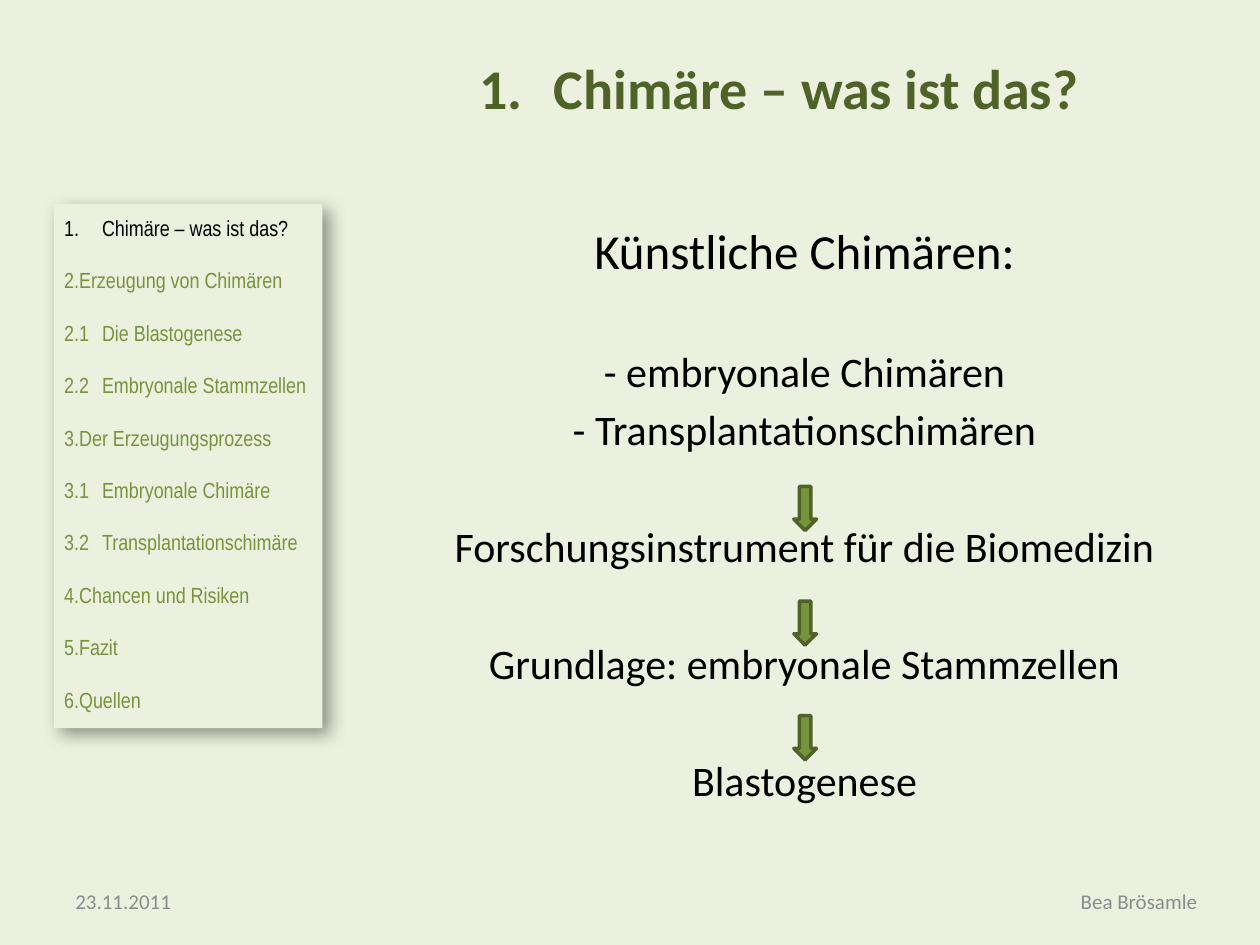
from lxml import etree
from pptx import Presentation
from pptx.dml.color import RGBColor
from pptx.enum import shapes, text
from pptx.oxml.ns import qn
from pptx.util import Inches, Pt

PALE, GREEN, DARK, BLACK, GREY = "EBF1DE", "77933C", "4F6228", "000000", "8C8C8C"
LEFT, CENTER, RIGHT = text.PP_ALIGN.LEFT, text.PP_ALIGN.CENTER, text.PP_ALIGN.RIGHT

TITLE = "1.\tChimäre – was ist das?"
# text, size, space before
BODY = [
    ("Künstliche Chimären:", 28, 5),
    ("- embryonale Chimären", 24, 38),
    ("- Transplantationschimären", 24, 4.4),
    ("Forschungsinstrument für die Biomedizin", 24, 38),
    ("Grundlage: embryonale Stammzellen", 24, 38),
    ("Blastogenese", 24, 38),
]
# automatic number (or None), text, hanging indent, colour
AGENDA = [
    (1, "Chimäre – was ist das?", 0.3, BLACK),
    (2, "Erzeugung von Chimären", 0, GREEN),
    (None, "2.1\tDie Blastogenese", 0.3, GREEN),
    (None, "2.2\tEmbryonale Stammzellen", 0.3, GREEN),
    (3, "Der Erzeugungsprozess", 0, GREEN),
    (None, "3.1\tEmbryonale Chimäre", 0.3, GREEN),
    (None, "3.2\tTransplantationschimäre", 0.3, GREEN),
    (4, "Chancen und Risiken", 0, GREEN),
    (5, "Fazit", 0, GREEN),
    (6, "Quellen", 0, GREEN),
]
# text, left, width, alignment
FOOTERS = [("23.11.2011", 0.5, 2.33, LEFT), ("Bea Brösamle", 6.58, 3.02, RIGHT)]
ARROW_TOP, ARROW_STEP, ARROW_COUNT = 3.86, 0.91, 3


def rgb(value):
    return RGBColor.from_string(value)


def place(sp, left, top, width, height):
    sp.left, sp.top, sp.width, sp.height = map(Inches, (left, top, width, height))


def set_frame(tf, inset, anchor):
    tf.word_wrap = True
    tf.auto_size = text.MSO_AUTO_SIZE.NONE
    tf.vertical_anchor = anchor
    tf.margin_left = tf.margin_right = Inches(inset)
    tf.margin_top = tf.margin_bottom = Inches(inset / 2 if inset == 0.1 else inset)


def write(p, words, size, color, align=LEFT, font="Calibri", bold=False,
          before=0, hang=0, number=None):
    """Fill one paragraph; number gives it an automatic number."""
    p.text = words
    p.alignment = align
    p.space_before = Pt(before)
    f = p.runs[0].font
    f.name, f.size, f.bold = font, Pt(size), bold
    f.color.rgb = rgb(color)
    pPr = p._p.get_or_add_pPr()
    pPr.set("marL", str(Inches(hang)))
    pPr.set("indent", str(-Inches(hang)))
    if number:
        etree.SubElement(pPr, qn("a:buAutoNum"), type="arabicPeriod",
                         startAt=str(number))
    else:
        etree.SubElement(pPr, qn("a:buNone"))


def paragraphs(tf, count):
    return [tf.paragraphs[0]] + [tf.add_paragraph() for _ in range(count - 1)]


def add_shadow(sp):
    effects = etree.SubElement(sp._element.spPr, qn("a:effectLst"))
    shadow = etree.SubElement(effects, qn("a:outerShdw"), blurRad=str(Pt(10)),
                              dist=str(Pt(5)), dir=str(45 * 60000),
                              algn="tl", rotWithShape="0")
    color = etree.SubElement(shadow, qn("a:srgbClr"), val=BLACK)
    etree.SubElement(color, qn("a:alpha"), val="40000")


prs = Presentation()
prs.slide_width, prs.slide_height = Inches(10), Inches(7.5)
s = prs.slides.add_slide(prs.slide_layouts.get_by_name("Two Content"))
s.background.fill.solid()
s.background.fill.fore_color.rgb = rgb(PALE)
title, body, agenda = s.placeholders

place(title, 2.76, 0.3, 6.85, 0.79)
set_frame(title.text_frame, 0, text.MSO_ANCHOR.MIDDLE)
write(title.text_frame.paragraphs[0], TITLE, 32, DARK, CENTER, bold=True, hang=0.59)

place(body, 3.27, 1.7, 6.23, 5)
set_frame(body.text_frame, 0.1, text.MSO_ANCHOR.TOP)
for p, (words, size, before) in zip(paragraphs(body.text_frame, len(BODY)), BODY):
    write(p, words, size, BLACK, CENTER, before=before)

place(agenda, 0.43, 1.62, 2.13, 4.16)
agenda.fill.solid()
agenda.fill.fore_color.rgb = rgb(PALE)
add_shadow(agenda)
set_frame(agenda.text_frame, 0.08, text.MSO_ANCHOR.TOP)
rows = paragraphs(agenda.text_frame, len(AGENDA))
for i, (p, (number, words, hang, color)) in enumerate(zip(rows, AGENDA)):
    write(p, words, 12.5, color, font="Arial Narrow", before=15 if i else 0,
          hang=hang, number=number)

for i in range(ARROW_COUNT):
    arrow = s.shapes.add_shape(shapes.MSO_SHAPE.DOWN_ARROW, Inches(6.3),
                               Inches(ARROW_TOP + i * ARROW_STEP),
                               Inches(0.18), Inches(0.35))
    arrow.shadow.inherit = False
    arrow.fill.solid()
    arrow.fill.fore_color.rgb = rgb(GREEN)
    arrow.line.color.rgb = rgb(DARK)
    arrow.line.width = Pt(2)

for words, left, width, align in FOOTERS:
    box = s.shapes.add_textbox(Inches(left), Inches(6.95), Inches(width), Inches(0.4))
    set_frame(box.text_frame, 0.1, text.MSO_ANCHOR.MIDDLE)
    write(box.text_frame.paragraphs[0], words, 12, GREY, align)

prs.save("out.pptx")
